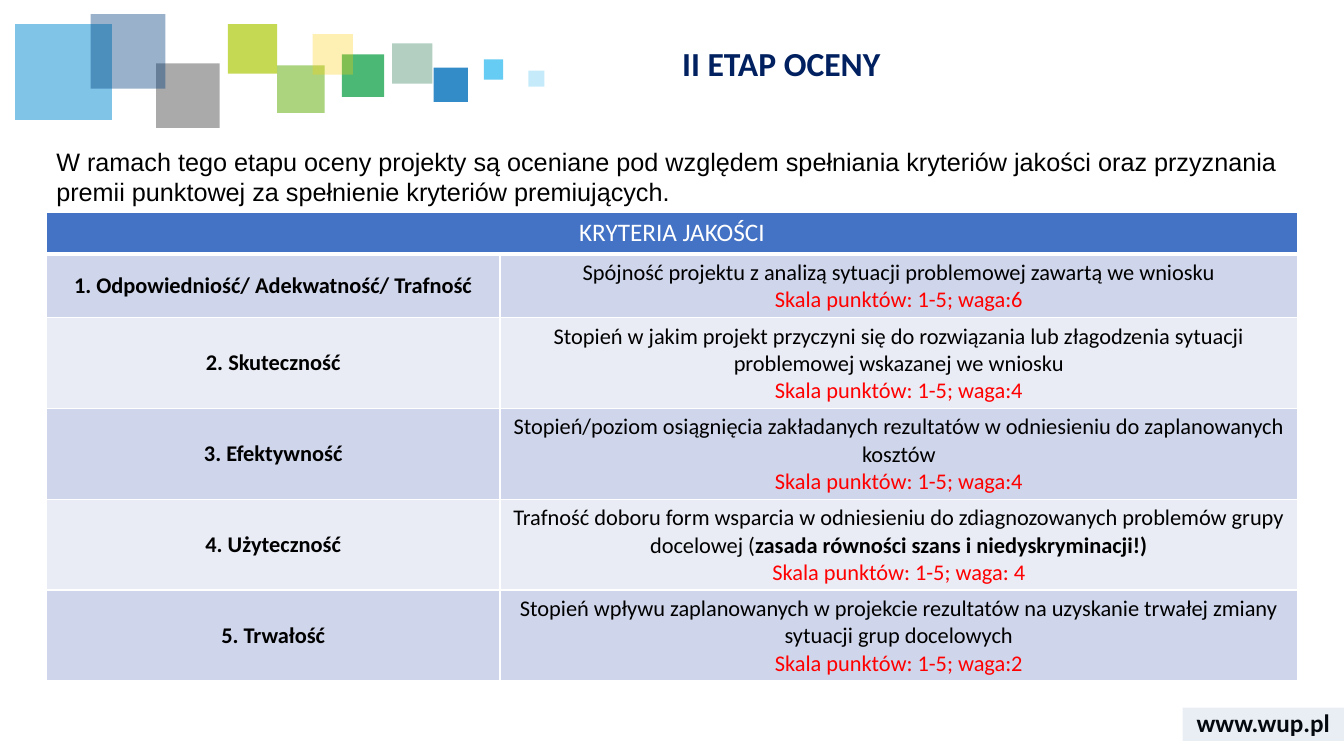
import pptx
import pptx.dml.color
import pptx.enum.shapes
import pptx.enum.text
import pptx.oxml.ns
import pptx.util
from lxml import etree

SLIDE_W, SLIDE_H = 13.33, 7.5
MARGIN = 0.46
CONTENT_W = SLIDE_W - 2 * MARGIN
INTRO_TOP, TABLE_TOP = 1.4, 2.11
FOOTER_W = 1.6
BLACK, WHITE, RED, NAVY = "000000", "FFFFFF", "FF0000", "002060"
HEADER_FILL, BAND_FILLS = "4472C4", ("CFD5EA", "E9EBF5")

# Decorative squares: left, top, width, height, colour, opacity in percent
SQUARES = [
    (3.89, 0.43, 0.4, 0.4, "006138", 30),
    (4.3, 0.67, 0.34, 0.34, "006EB9", 80),
    (3.39, 0.54, 0.42, 0.42, "009A3C", 70),
    (0.15, 0.24, 0.96, 0.95, "028BD3", 50),
    (2.75, 0.65, 0.47, 0.47, "75B82A", 60),
    (1.55, 0.63, 0.63, 0.64, "575757", 50),
    (0.9, 0.14, 0.74, 0.74, "003D7C", 40),
    (4.8, 0.59, 0.19, 0.2, "40C0F1", 80),
    (2.26, 0.24, 0.49, 0.49, "AFCA0B", 70),
    (3.1, 0.34, 0.4, 0.4, "FED000", 30),
    (5.24, 0.7, 0.16, 0.16, "40C0F1", 30),
]

# Criteria: name, description runs (text, bold), weight, row height
CRITERIA = [
    ("1. Odpowiedniość/ Adekwatność/ Trafność",
     [("Spójność projektu z analizą sytuacji problemowej zawartą we wniosku", False)],
     "6", 0.63),
    ("2. Skuteczność",
     [("Stopień w jakim projekt przyczyni się do rozwiązania lub złagodzenia sytuacji "
       "problemowej wskazanej we wniosku", False)],
     "4", 0.84),
    ("3. Efektywność",
     [("Stopień/poziom osiągnięcia zakładanych rezultatów w odniesieniu do "
       "zaplanowanych kosztów", False)],
     "4", 0.81),
    ("4. Użyteczność",
     [("Trafność doboru form wsparcia w odniesieniu do zdiagnozowanych problemów "
       "grupy docelowej (", False),
      ("zasada równości szans i niedyskryminacji!)", True)],
     " 4", 0.9),
    ("5. Trwałość",
     [("Stopień wpływu zaplanowanych w projekcie rezultatów na uzyskanie trwałej "
       "zmiany sytuacji grup docelowych", False)],
     "2", 0.9),
]
CENTER = pptx.enum.text.PP_ALIGN.CENTER
LEFT = pptx.enum.text.PP_ALIGN.LEFT
TOP = pptx.enum.text.MSO_ANCHOR.TOP
MIDDLE = pptx.enum.text.MSO_ANCHOR.MIDDLE


def color(hex_string):
    return pptx.dml.color.RGBColor.from_string(hex_string)


def inches(*lengths):
    return [pptx.util.Inches(length) for length in lengths]


def add_run(paragraph, text, size, hex_color, bold=False, font="Calibri"):
    run = paragraph.add_run()
    run.text = text
    run.font.name = font
    run.font.size = pptx.util.Pt(size)
    run.font.bold = bold
    run.font.color.rgb = color(hex_color)


def add_tinted_rect(slide, left, top, width, height, hex_color, opacity):
    rect = slide.shapes.add_shape(pptx.enum.shapes.MSO_SHAPE.RECTANGLE,
                                  *inches(left, top, width, height))
    rect.shadow.inherit = False
    rect.line.fill.background()
    rect.fill.solid()
    rect.fill.fore_color.rgb = color(hex_color)
    tint = rect.fill._xPr.find(".//" + pptx.oxml.ns.qn("a:srgbClr"))
    etree.SubElement(tint, pptx.oxml.ns.qn("a:alpha"), val=str(opacity * 1000))


def add_text(slide, box, text, size, align, anchor, **run_format):
    frame = slide.shapes.add_textbox(*inches(*box)).text_frame
    frame.word_wrap = True
    frame.vertical_anchor = anchor
    frame.paragraphs[0].alignment = align
    add_run(frame.paragraphs[0], text, size, BLACK, **run_format)


def set_title(slide, text):
    title = slide.shapes.title
    title.left, title.top, title.width, title.height = inches(
        SLIDE_W / 2, 0.42, 6.36, 0.55)
    frame = title.text_frame
    frame.auto_size = pptx.enum.text.MSO_AUTO_SIZE.NONE
    frame.vertical_anchor = TOP
    paragraph = frame.paragraphs[0]
    paragraph.alignment = LEFT
    paragraph.line_spacing = 0.9
    add_run(paragraph, text, 24, NAVY, bold=True)


def style_cell(cell, hex_fill, anchor, bottom_width=1):
    properties = cell._tc.get_or_add_tcPr()
    for side, width in (("L", 1), ("R", 1), ("T", 1), ("B", bottom_width)):
        border = etree.SubElement(properties, pptx.oxml.ns.qn("a:ln" + side),
                                  w=str(pptx.util.Pt(width)))
        solid = etree.SubElement(border, pptx.oxml.ns.qn("a:solidFill"))
        etree.SubElement(solid, pptx.oxml.ns.qn("a:srgbClr"), val=WHITE)
    cell.fill.solid()
    cell.fill.fore_color.rgb = color(hex_fill)
    cell.vertical_anchor = anchor


def fill_cell(cell, lines):
    """Write centred lines; each line is a list of (text, size, colour, bold)."""
    frame = cell.text_frame
    for index, runs in enumerate(lines):
        paragraph = frame.add_paragraph() if index else frame.paragraphs[0]
        paragraph.alignment = CENTER
        for run in runs:
            add_run(paragraph, *run)


def add_criteria_table(slide):
    heights = [0.41] + [height for *_, height in CRITERIA]
    table = slide.shapes.add_table(
        len(heights), 2,
        *inches(MARGIN, TABLE_TOP, CONTENT_W, sum(heights))).table
    table.first_row = table.horz_banding = False
    for column, width in zip(table.columns, inches(4.5, CONTENT_W - 4.5)):
        column.width = width
    for row, height in zip(table.rows, inches(*heights)):
        row.height = height

    # Header across both columns
    header = table.cell(0, 0)
    header.merge(table.cell(0, 1))
    for column in range(2):
        style_cell(table.cell(0, column), HEADER_FILL, TOP, bottom_width=3)
    fill_cell(header, [[("KRYTERIA JAKOŚCI", 18, WHITE, False)]])

    # One banded row per criterion
    for index, (name, description, weight, _) in enumerate(CRITERIA):
        name_cell, detail_cell = table.rows[index + 1].cells
        band = BAND_FILLS[index % 2]
        style_cell(name_cell, band, MIDDLE)
        style_cell(detail_cell, band, TOP)
        fill_cell(name_cell, [[(name, 16, BLACK, True)]])
        fill_cell(detail_cell, [
            [(text, 16, BLACK, bold) for text, bold in description],
            [(f"Skala punktów: 1-5; waga:{weight}", 16, RED, False)],
        ])


def main():
    deck = pptx.Presentation()
    deck.slide_width, deck.slide_height = inches(SLIDE_W, SLIDE_H)
    slide = deck.slides.add_slide(deck.slide_layouts.get_by_name("Title Only"))

    # Footer address and its tinted band
    footer_left = SLIDE_W - FOOTER_W
    add_text(slide, (footer_left, 6.97, FOOTER_W, 0.4), "www.wup.pl", 18,
             CENTER, MIDDLE, bold=True)
    add_tinted_rect(slide, footer_left, 7.02, FOOTER_W, 0.33, "2F5597", 10)

    # Header squares and title
    for square in SQUARES:
        add_tinted_rect(slide, *square)
    set_title(slide, "II ETAP OCENY")

    # Content
    add_criteria_table(slide)
    add_text(slide, (MARGIN, INTRO_TOP, CONTENT_W, TABLE_TOP - INTRO_TOP),
             "W ramach tego etapu oceny projekty są oceniane pod względem spełniania "
             "kryteriów jakości oraz przyznania premii punktowej za spełnienie "
             "kryteriów premiujących.", 18, LEFT, TOP, font="Arial")
    deck.save("out.pptx")


if __name__ == "__main__":
    main()
